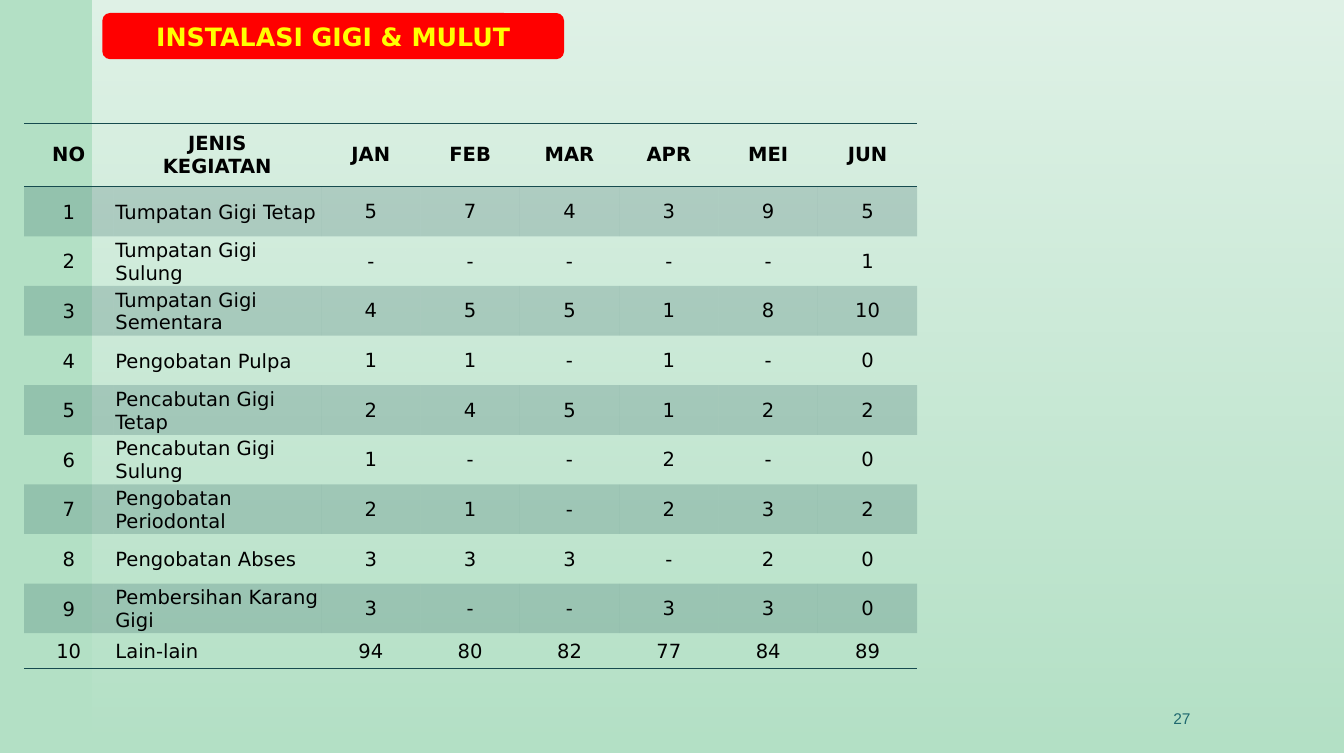
import pptx
import pptx.util
import pptx.dml.color
import pptx.enum.shapes
import pptx.enum.text
import pptx.oxml
import pptx.oxml.ns

Inches, Pt = pptx.util.Inches, pptx.util.Pt
RGBColor = pptx.dml.color.RGBColor
PP_ALIGN = pptx.enum.text.PP_ALIGN
MIDDLE = pptx.enum.text.MSO_ANCHOR.MIDDLE
MSO_SHAPE = pptx.enum.shapes.MSO_SHAPE

MINT = RGBColor(0xB3, 0xE0, 0xC5)
WHITE = RGBColor(0xFF, 0xFF, 0xFF)
RED = RGBColor(0xFF, 0x00, 0x00)
YELLOW = RGBColor(0xFF, 0xFF, 0x00)
BLACK = RGBColor(0x00, 0x00, 0x00)
TEAL = RGBColor(0x1F, 0x69, 0x6F)
DARK_TEAL = RGBColor(0x16, 0x4B, 0x4F)

HEADINGS = ["NO", "JENIS KEGIATAN", "JAN", "FEB", "MAR", "APR", "MEI", "JUN"]
ACTIVITIES = [
    ("Tumpatan Gigi Tetap", "5 7 4 3 9 5"),
    ("Tumpatan Gigi Sulung", "- - - - - 1"),
    ("Tumpatan Gigi Sementara", "4 5 5 1 8 10"),
    ("Pengobatan Pulpa", "1 1 - 1 - 0"),
    ("Pencabutan Gigi Tetap", "2 4 5 1 2 2"),
    ("Pencabutan Gigi Sulung", "1 - - 2 - 0"),
    ("Pengobatan Periodontal", "2 1 - 2 3 2"),
    ("Pengobatan Abses", "3 3 3 - 2 0"),
    ("Pembersihan Karang Gigi", "3 - - 3 3 0"),
    ("Lain-lain", "94 80 82 77 84 89"),
]
NO_STYLE_NO_GRID = "{2D5ABB26-0587-4C30-8999-92F81FD0307C}"


def set_alpha(fill_element, percents):
    """Give each colour inside a fill its opacity in percent."""
    colours = fill_element.iter(pptx.oxml.ns.qn("a:srgbClr"))
    for colour, percent in zip(colours, percents):
        colour.append(pptx.oxml.parse_xml(
            f'<a:alpha {pptx.oxml.ns.nsdecls("a")} val="{percent * 1000}"/>'))


def style_text(paragraph, font_name, size, colour, bold, align):
    paragraph.alignment = align
    paragraph.font.name = font_name
    paragraph.font.size = Pt(size)
    paragraph.font.bold = bold
    paragraph.font.color.rgb = colour


presentation = pptx.Presentation()
presentation.slide_width = Inches(13.39)
presentation.slide_height = Inches(7.5)
slide = presentation.slides.add_slide(presentation.slide_layouts[6])

# Background with a fading white panel
slide.background.fill.solid()
slide.background.fill.fore_color.rgb = MINT
panel = slide.shapes.add_shape(
    MSO_SHAPE.RECTANGLE, Inches(0.92), 0, Inches(12.47), Inches(7.5))
panel.shadow.inherit = False
panel.line.fill.background()
panel.fill.gradient()
panel.fill.gradient_angle = 270
for stop in panel.fill.gradient_stops:
    stop.color.rgb = WHITE
set_alpha(panel.fill._xPr, [60, 0])

# Slide number
page_number = slide.shapes.add_textbox(
    Inches(8.84), Inches(6.95), Inches(3.12), Inches(0.4)).text_frame
page_number.word_wrap = True
page_number.vertical_anchor = MIDDLE
page_number.text = "27"
style_text(page_number.paragraphs[0], "Arial", 11.1, TEAL, False, PP_ALIGN.RIGHT)

# Title
title = slide.shapes.add_shape(
    MSO_SHAPE.ROUNDED_RECTANGLE, Inches(1.02), Inches(0.13), Inches(4.6), Inches(0.46))
title.shadow.inherit = False
title.line.fill.background()
title.fill.solid()
title.fill.fore_color.rgb = RED
title.text_frame.vertical_anchor = MIDDLE
title.text_frame.text = "INSTALASI GIGI & MULUT"
style_text(title.text_frame.paragraphs[0], "DejaVu Sans", 18.1, YELLOW, True,
           PP_ALIGN.CENTER)

# Table grid
rows = [HEADINGS] + [[str(number), activity, *counts.split()]
                     for number, (activity, counts) in enumerate(ACTIVITIES, 1)]
last_row = len(rows) - 1
table = slide.shapes.add_table(
    len(rows), len(HEADINGS), Inches(0.24), Inches(1.23), Inches(8.9), Inches(5.43)).table
table.first_row = True
table.horz_banding = False
table._tbl.tblPr.find(pptx.oxml.ns.qn("a:tableStyleId")).text = NO_STYLE_NO_GRID

for column, width in zip(table.columns, [0.89, 2.07] + [0.99] * 6):
    column.width = Inches(width)
body_height = (5.43 - 0.63 - 0.35) / (last_row - 1)
for row, height in zip(table.rows, [0.63] + [body_height] * (last_row - 1) + [0.35]):
    row.height = Inches(height)

# Table cells
for r, values in enumerate(rows):
    for c, value in enumerate(values):
        cell = table.cell(r, c)
        cell.text = value
        cell.vertical_anchor = MIDDLE
        if r == 0:
            side, top, bottom = 0.2, 0.08, 0.08
        else:
            side = top = 0.02 if c < 2 else 0.01
            bottom = 0
        cell.margin_left = cell.margin_right = Inches(side)
        cell.margin_top, cell.margin_bottom = Inches(top), Inches(bottom)
        align = PP_ALIGN.LEFT if r > 0 and c == 1 else PP_ALIGN.CENTER
        style_text(cell.text_frame.paragraphs[0], "DejaVu Sans", 14, BLACK, r == 0, align)

        # Shade the odd rows, except the heading
        properties = cell._tc.get_or_add_tcPr()
        if r % 2:
            cell.fill.solid()
            cell.fill.fore_color.rgb = DARK_TEAL
            set_alpha(properties, [20])
        else:
            cell.fill.background()

        # Rules around the heading and under the last row
        edges = {0: ["lnT", "lnB"], last_row: ["lnB"]}.get(r, [])
        for position, edge in enumerate(edges):
            properties.insert(position, pptx.oxml.parse_xml(
                f'<a:{edge} {pptx.oxml.ns.nsdecls("a")} w="{Pt(1)}"><a:solidFill>'
                f'<a:srgbClr val="{DARK_TEAL}"/></a:solidFill></a:{edge}>'))

presentation.save("out.pptx")
